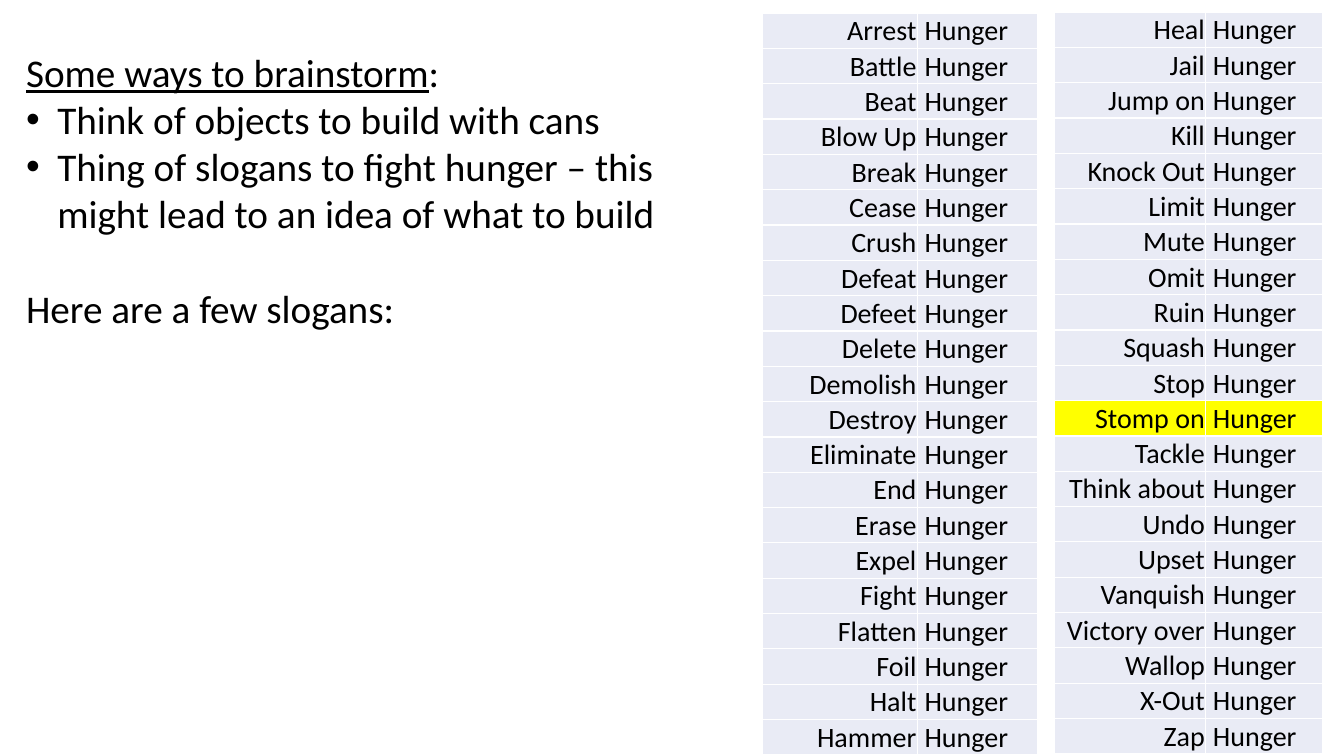
from lxml import etree
from pptx import Presentation
from pptx.dml.color import RGBColor
from pptx.enum.text import MSO_ANCHOR, MSO_AUTO_SIZE, PP_ALIGN
from pptx.oxml.ns import qn
from pptx.util import Inches, Pt

BLACK = RGBColor(0x00, 0x00, 0x00)
WHITE = RGBColor(0xFF, 0xFF, 0xFF)
PALE_BLUE = RGBColor(0xE9, 0xEB, 0xF5)
YELLOW = RGBColor(0xFF, 0xFF, 0x00)
BOTTOM = MSO_ANCHOR.BOTTOM
FIT_SHAPE = MSO_AUTO_SIZE.SHAPE_TO_FIT_TEXT
LEFT, RIGHT = PP_ALIGN.LEFT, PP_ALIGN.RIGHT

TABLE_HEIGHT = Inches(7.25)
HIGHLIGHT = "Stomp on"
SLOGAN_LISTS = [
    (7.56, 0.13, (1.54, 1.19), [
        "Arrest", "Battle", "Beat", "Blow Up", "Break", "Cease", "Crush",
        "Defeat", "Defeet", "Delete", "Demolish", "Destroy", "Eliminate",
        "End", "Erase", "Expel", "Fight", "Flatten", "Foil", "Halt", "Hammer"]),
    (10.46, 0.12, (1.5, 1.16), [
        "Heal", "Jail", "Jump on", "Kill", "Knock Out", "Limit", "Mute",
        "Omit", "Ruin", "Squash", "Stop", "Stomp on", "Tackle", "Think about",
        "Undo", "Upset", "Vanquish", "Victory over", "Wallop", "X-Out", "Zap"]),
]
TIPS = [
    (["Some ways to brainstorm", ":"], False, 0),
    (["Think of objects to build with cans"], True, 0),
    (["Thing of slogans to fight hunger – this might lead to an idea of what to build"], True, 0),
    (["Here are a few slogans:"], False, 34),
]


def set_font(font, size):
    for name, value in {"name": "Calibri", "size": Pt(size)}.items():
        setattr(font, name, value)
    font.color.rgb = BLACK


def add_borders(cell):
    properties = cell._tc.get_or_add_tcPr()
    for position, side in enumerate(("lnL", "lnR", "lnT", "lnB")):
        border = etree.Element(qn(f"a:{side}"), w=str(Pt(1)))
        fill = etree.SubElement(border, qn("a:solidFill"))
        etree.SubElement(fill, qn("a:srgbClr"), val=str(WHITE))
        properties.insert(position, border)


prs = Presentation()
prs.slide_width, prs.slide_height = Inches(13.33), Inches(7.5)
slide = prs.slides.add_slide(prs.slide_layouts[6])

for left, top, widths, verbs in SLOGAN_LISTS:
    slogans = slide.shapes.add_table(
        len(verbs), 2, Inches(left), Inches(top), Inches(sum(widths)), TABLE_HEIGHT).table
    slogans.first_row = slogans.horz_banding = False
    for column, width in zip(slogans.columns, widths):
        column.width = Inches(width)
    for row, verb in enumerate(verbs):
        slogans.rows[row].height = TABLE_HEIGHT // len(verbs)
        for col, (word, align, indent) in enumerate(
                [(verb, RIGHT, 0.01), ("Hunger", LEFT, 0.07)]):
            cell = slogans.cell(row, col)
            cell_format = {
                "text": word, "vertical_anchor": BOTTOM,
                "margin_left": Inches(indent), "margin_right": Inches(0.01),
                "margin_top": Inches(0.01), "margin_bottom": 0,
            }
            for name, value in cell_format.items():
                setattr(cell, name, value)
            cell.fill.solid()
            cell.fill.fore_color.rgb = YELLOW if verb == HIGHLIGHT else PALE_BLUE
            add_borders(cell)
            paragraph = cell.text_frame.paragraphs[0]
            paragraph.alignment = align
            set_font(paragraph.runs[0].font, 20)

tips = slide.shapes.add_textbox(
    Inches(0.16), Inches(0.43), Inches(7.05), Inches(2.93)).text_frame
tips.word_wrap = True
tips.auto_size = FIT_SHAPE
for number, (parts, bulleted, gap) in enumerate(TIPS):
    paragraph = tips.add_paragraph() if number else tips.paragraphs[0]
    if gap:
        paragraph.space_before = Pt(gap)
    if bulleted:
        properties = paragraph._p.get_or_add_pPr()
        properties.set("marL", str(Inches(0.31)))
        properties.set("indent", str(Inches(-0.31)))
        etree.SubElement(properties, qn("a:buFont"), typeface="Arial")
        etree.SubElement(properties, qn("a:buChar"), char="•")
    for part in parts:
        run = paragraph.add_run()
        run.text = part
        set_font(run.font, 28)
tips.paragraphs[0].runs[0].font.underline = True

prs.save("out.pptx")
